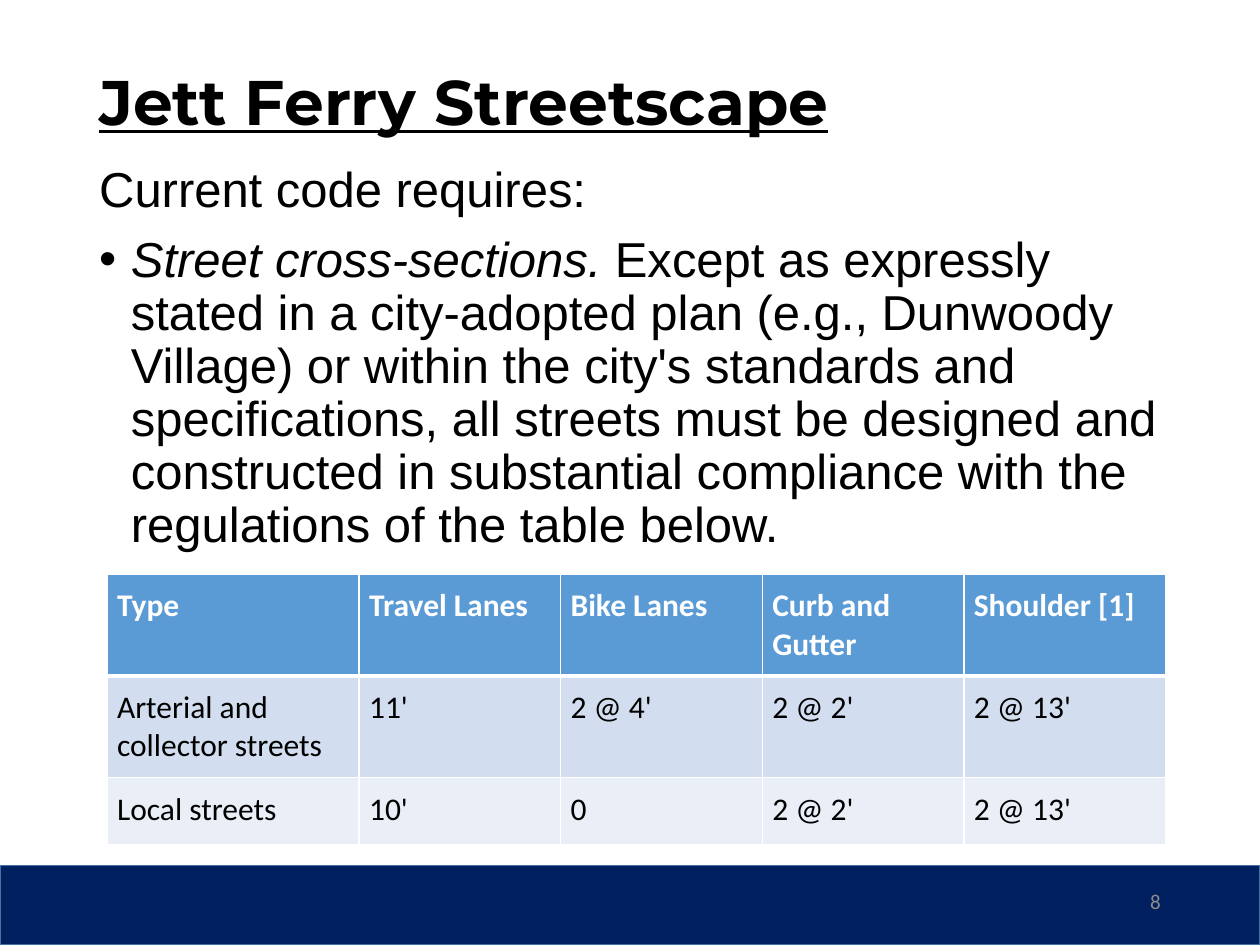
from dataclasses import dataclass

from lxml.etree import SubElement
from pptx import Presentation
from pptx.dml.color import RGBColor as RGB
from pptx.enum.shapes import MSO_SHAPE as Shape
from pptx.enum.text import MSO_ANCHOR as Anchor, PP_ALIGN as Align
from pptx.oxml.ns import qn
from pptx.util import Cm, Pt


@dataclass(frozen=True)
class Theme:
    """Colours, fonts and type sizes of the deck."""
    navy: str = "002060"
    edge: str = "43739E"
    head: str = "5B9BD5"
    bands: tuple = ("D2DEEF", "EAEFF7")
    white: str = "FFFFFF"
    black: str = "000000"
    grey: str = "8C8C8C"
    title_font: str = "Montserrat"
    body_font: str = "Arial"
    table_font: str = "Calibri"
    title_size: int = 36
    body_size: int = 28
    table_size: int = 18
    number_size: int = 12


T = Theme()

INTRO = "Current code requires:\u00a0"
RULE_NAME = "Street cross-sections."
RULE = ("\u00a0Except as expressly stated in a city-adopted plan (e.g., Dunwoody Village) "
        "or within the city's standards and specifications, all streets must be designed "
        "and constructed in substantial compliance with the regulations of the table below.\u00a0")
ROWS = [
    ("Type", "Travel Lanes", "Bike Lanes", "Curb and Gutter", "Shoulder [1]"),
    ("Arterial and collector streets", "11'", "2 @ 4'", "2 @ 2'", "2 @ 13'"),
    ("Local streets", "10'", "0", "2 @ 2'", "2 @ 13'"),
]
COL_SHARES = (5, 4, 4, 4, 4)
ROW_HEIGHTS = (2.05, 2.05, 1.35)


def add_run(p, text, font, size, color, bold=False, italic=False, underline=False):
    """Append one styled run to a paragraph."""
    r = p.add_run()
    r.text = text
    f = r.font
    f.name, f.size, f.color.rgb = font, Pt(size), RGB.from_string(color)
    f.bold, f.italic, f.underline = bold, italic, underline


def add_text_box(slide, box, anchor=Anchor.TOP):
    """Add a wrapping text box and return its text frame."""
    tf = slide.shapes.add_textbox(*map(Cm, box)).text_frame
    tf.word_wrap = True
    tf.vertical_anchor = anchor
    return tf


def add_title(slide, box):
    """Place the underlined heading."""
    p = add_text_box(slide, box, Anchor.MIDDLE).paragraphs[0]
    p.line_spacing = 0.9
    add_run(p, "Jett Ferry Streetscape", T.title_font, T.title_size, T.black,
            bold=True, underline=True)


def add_body(slide, box):
    """Place the introduction and the bulleted rule."""
    tf = add_text_box(slide, box)
    intro, rule = tf.paragraphs[0], tf.add_paragraph()
    pPr = rule._p.get_or_add_pPr()
    pPr.set("marL", str(Cm(0.64)))
    pPr.set("indent", str(-Cm(0.64)))
    SubElement(pPr, qn("a:buFont"), typeface=T.body_font)
    SubElement(pPr, qn("a:buChar"), char="•")
    intro.line_spacing = rule.line_spacing = 0.9
    rule.space_before = Pt(10)
    add_run(intro, INTRO, T.body_font, T.body_size, T.black)
    add_run(rule, RULE_NAME, T.body_font, T.body_size, T.black, italic=True)
    add_run(rule, RULE, T.body_font, T.body_size, T.black)


def set_borders(cell, bottom):
    """Draw white cell borders with the given bottom width in points."""
    tcPr = cell._tc.get_or_add_tcPr()
    for i, (side, width) in enumerate((("L", 1), ("R", 1), ("T", 1), ("B", bottom))):
        ln = tcPr.makeelement(qn(f"a:ln{side}"), {"w": str(Pt(width))})
        SubElement(SubElement(ln, qn("a:solidFill")), qn("a:srgbClr"), val=T.white)
        tcPr.insert(i, ln)


def fill_cell(cell, text, is_head, fill):
    """Style one table cell and write its text."""
    cell.fill.solid()
    cell.fill.fore_color.rgb = RGB.from_string(fill)
    cell.margin_left = cell.margin_right = Cm(0.2)
    cell.margin_top = cell.margin_bottom = Cm(0.25)
    set_borders(cell, 3 if is_head else 1)
    add_run(cell.text_frame.paragraphs[0], text, T.table_font, T.table_size,
            T.white if is_head else T.black, bold=is_head)


def add_street_table(slide, box):
    """Place the table of street cross-sections."""
    table = slide.shapes.add_table(len(ROWS), len(COL_SHARES), *map(Cm, box)).table
    for col, share in zip(table.columns, COL_SHARES):
        col.width = Cm(box[2] * share / sum(COL_SHARES))
    for i, (row, height) in enumerate(zip(ROWS, ROW_HEIGHTS)):
        table.rows[i].height = Cm(height)
        fill = T.bands[(i - 1) % 2] if i else T.head
        for j, text in enumerate(row):
            fill_cell(table.cell(i, j), text, i == 0, fill)


def add_footer(slide, box):
    """Place the navy band and the slide number on it."""
    left, top, width, height = box
    sp = slide.shapes.add_shape(Shape.RECTANGLE, *map(Cm, box))
    sp.shadow.inherit = False
    sp.fill.solid()
    sp.fill.fore_color.rgb = RGB.from_string(T.navy)
    sp.line.color.rgb = RGB.from_string(T.edge)
    sp.line.width = Pt(1)
    number_box = (left + width - 7.47, top + 0.2, 5.72, 1.02)
    p = add_text_box(slide, number_box, Anchor.MIDDLE).paragraphs[0]
    p.alignment = Align.RIGHT
    add_run(p, "8", T.table_font, T.number_size, T.grey)


def main():
    """Build and save the slide."""
    prs = Presentation()
    prs.slide_width, prs.slide_height = Cm(25.4), Cm(19.05)
    slide = prs.slides.add_slide(prs.slide_layouts[6])
    add_footer(slide, (0, 17.45, 25.4, 1.6))
    add_title(slide, (1.75, 1.02, 21.9, 2.18))
    add_body(slide, (1.75, 3.2, 21.9, 13.97))
    add_street_table(slide, (2.16, 11.58, 21.34, sum(ROW_HEIGHTS)))
    prs.save("out.pptx")


if __name__ == "__main__":
    main()
